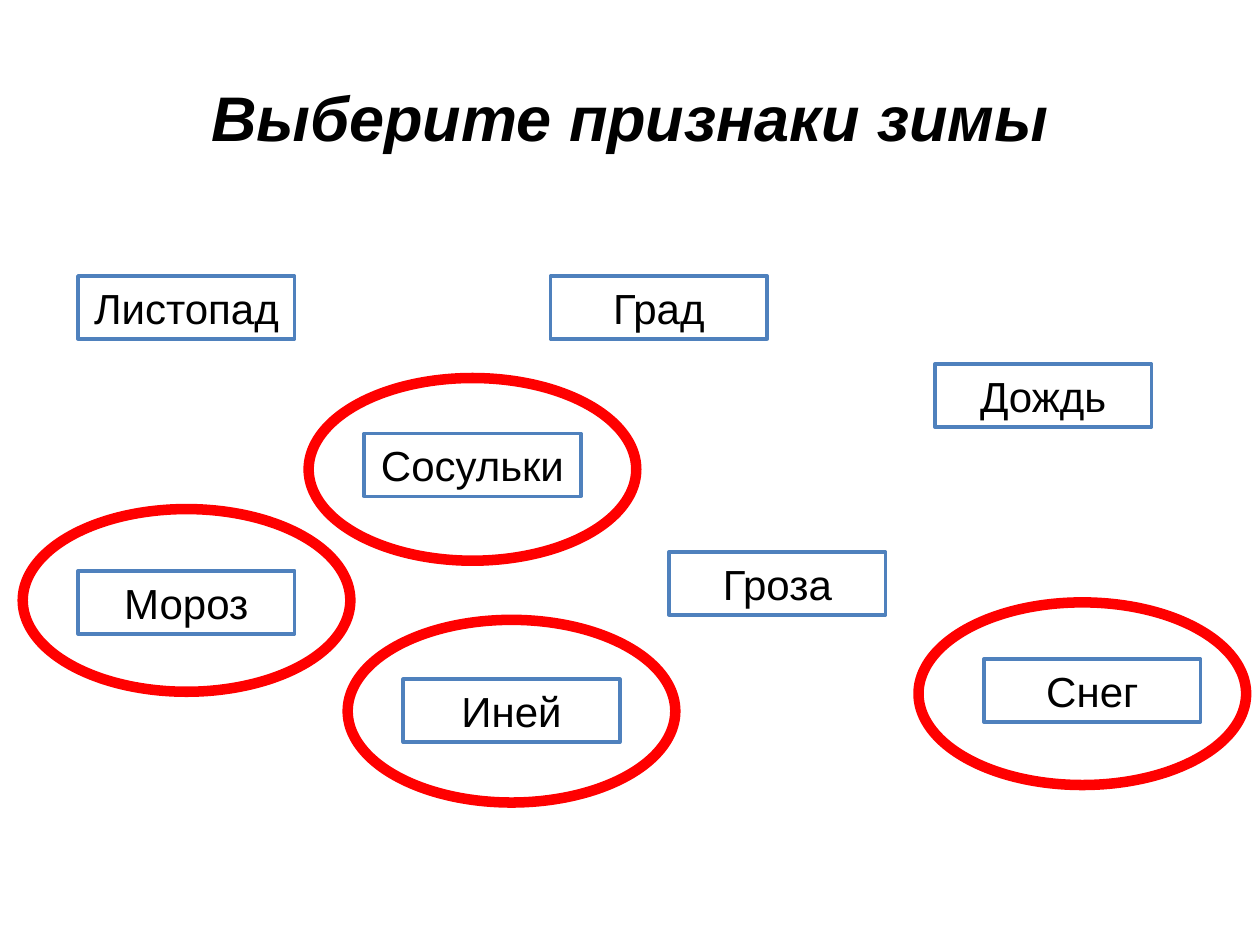
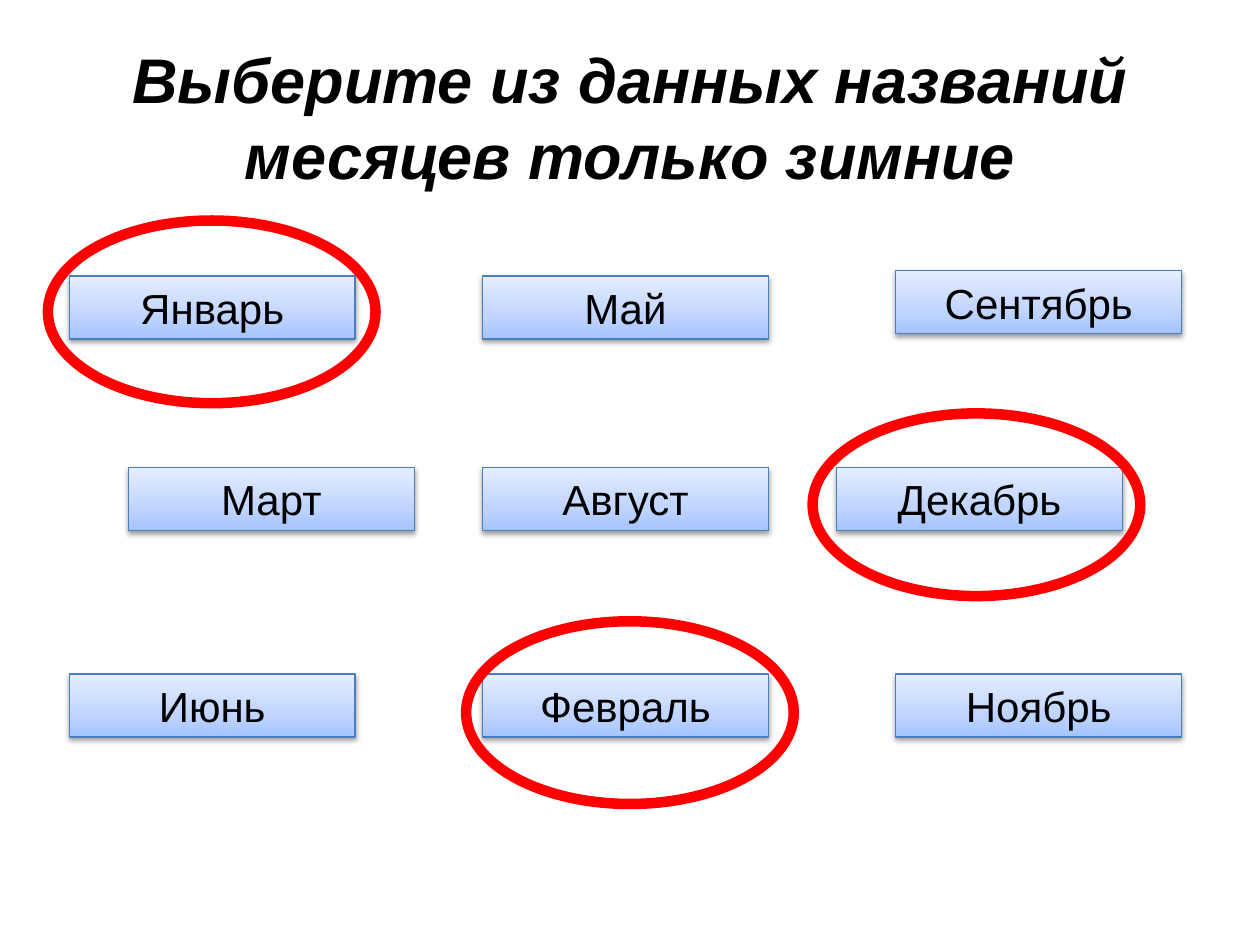
from copy import deepcopy

from lxml.etree import SubElement
from pptx import Presentation
from pptx.dml.color import RGBColor
from pptx.enum.shapes import MSO_SHAPE
from pptx.enum.text import MSO_ANCHOR, PP_ALIGN
from pptx.oxml.ns import qn
from pptx.util import Pt

FONT = "Arial"
BLACK = "000000"
WHITE = "FFFFFF"
RED = "FF0000"
WORD_LINE = "4F81BD"
MONTH_LINE = "4B7EBC"
MONTH_STOPS = [(0, "A4C4FF"), (0.35, "BFD4FF"), (1, "E6EEFF")]
WORD_WIDTH = 123.8
MONTH_WIDTH = 163.4
BOX_HEIGHT = 36
RING_SIZE = (187.2, 104.4)

WORDS = [
    ("Листопад", 44.6, 157.7),
    ("Сосульки", 208.1, 247.7),
    ("Гроза", 382.3, 315.4),
    ("Мороз", 44.6, 326.2),
    ("Снег", 562.3, 376.6),
    ("Дождь", 534.2, 208.1),
    ("Град", 314.6, 157.7),
    ("Иней", 230.4, 388.1),
]
WINTER_WORD_RINGS = [(176.4, 216), (13, 290.9), (198.7, 354.2), (524.9, 344.2)]

MONTH_ROWS = [
    (39.6, 236.15, [("Январь", 157.7), ("Май", 157.7), ("Сентябрь", 154.8)]),
    (73.4, 202.35, [("Март", 267.1), ("Август", 267.1), ("Декабрь", 267.1)]),
    (39.6, 236.15, [("Июнь", 385.2), ("Февраль", 385.2), ("Ноябрь", 385.2)]),
]
WINTER_MONTH_RINGS = [(27.4, 126), (464.4, 236.2), (266.4, 355)]


def color(value):
    return RGBColor.from_string(value)


def format_text(tf, size, bold=False, italic=False):
    tf.vertical_anchor = MSO_ANCHOR.MIDDLE
    p = tf.paragraphs[0]
    p.alignment = PP_ALIGN.CENTER
    font = p.runs[0].font
    font.name = FONT
    font.size = Pt(size)
    font.bold = bold
    font.italic = italic
    font.color.rgb = color(BLACK)


def add_slide(prs, title):
    s = prs.slides.add_slide(prs.slide_layouts[5])
    sp = s.shapes.title
    sp.left, sp.top, sp.width, sp.height = Pt(36), Pt(21.6), Pt(648), Pt(90)
    sp.text_frame.text = title
    format_text(sp.text_frame, 36, bold=True, italic=True)
    return s


def add_outlined(s, kind, left, top, width, height, line, weight):
    sp = s.shapes.add_shape(kind, Pt(left), Pt(top), Pt(width), Pt(height))
    sp.shadow.inherit = False
    sp.line.color.rgb = color(line)
    sp.line.width = Pt(weight)
    return sp


def add_box(s, text, left, top, width, line, weight):
    sp = add_outlined(s, MSO_SHAPE.RECTANGLE, left, top, width, BOX_HEIGHT, line, weight)
    tf = sp.text_frame
    tf.word_wrap = False
    tf.text = text
    format_text(tf, 24)
    return sp


def add_word(s, text, left, top):
    sp = add_box(s, text, left, top, WORD_WIDTH, WORD_LINE, 2)
    sp.fill.solid()
    sp.fill.fore_color.rgb = color(WHITE)


def add_month(s, text, left, top):
    sp = add_box(s, text, left, top, MONTH_WIDTH, MONTH_LINE, 0.75)
    fill_gradient(sp)
    add_shadow(sp)


def fill_gradient(sp):
    sp.fill.gradient()
    sp.fill.gradient_angle = 90
    stops = sp._element.spPr.find(qn("a:gradFill")).find(qn("a:gsLst"))
    stops.append(deepcopy(stops[0]))
    for stop, (position, value) in zip(sp.fill.gradient_stops, MONTH_STOPS):
        stop.position = position
        stop.color.rgb = color(value)


def add_shadow(sp):
    effects = sp._element.spPr.find(qn("a:effectLst"))
    shadow = SubElement(effects, qn("a:outerShdw"), blurRad=str(Pt(3.1)),
                        dist=str(Pt(1.6)), dir="5400000", rotWithShape="0")
    shade = SubElement(shadow, qn("a:srgbClr"), val=BLACK)
    SubElement(shade, qn("a:alpha"), val="38000")


def add_rings(s, places):
    for left, top in places:
        sp = add_outlined(s, MSO_SHAPE.OVAL, left, top, *RING_SIZE, RED, 6)
        sp.fill.background()


def build_signs(prs):
    s = add_slide(prs, "Выберите признаки зимы")
    for text, left, top in WORDS:
        add_word(s, text, left, top)
    add_rings(s, WINTER_WORD_RINGS)


def build_months(prs):
    s = add_slide(prs, "Выберите из данных названий месяцев только зимние")
    for left, step, months in MONTH_ROWS:
        for i, (text, top) in enumerate(months):
            add_month(s, text, left + i * step, top)
    add_rings(s, WINTER_MONTH_RINGS)


def main():
    prs = Presentation()
    prs.slide_width, prs.slide_height = Pt(720), Pt(540)
    build_signs(prs)
    build_months(prs)
    prs.save("out.pptx")


if __name__ == "__main__":
    main()
